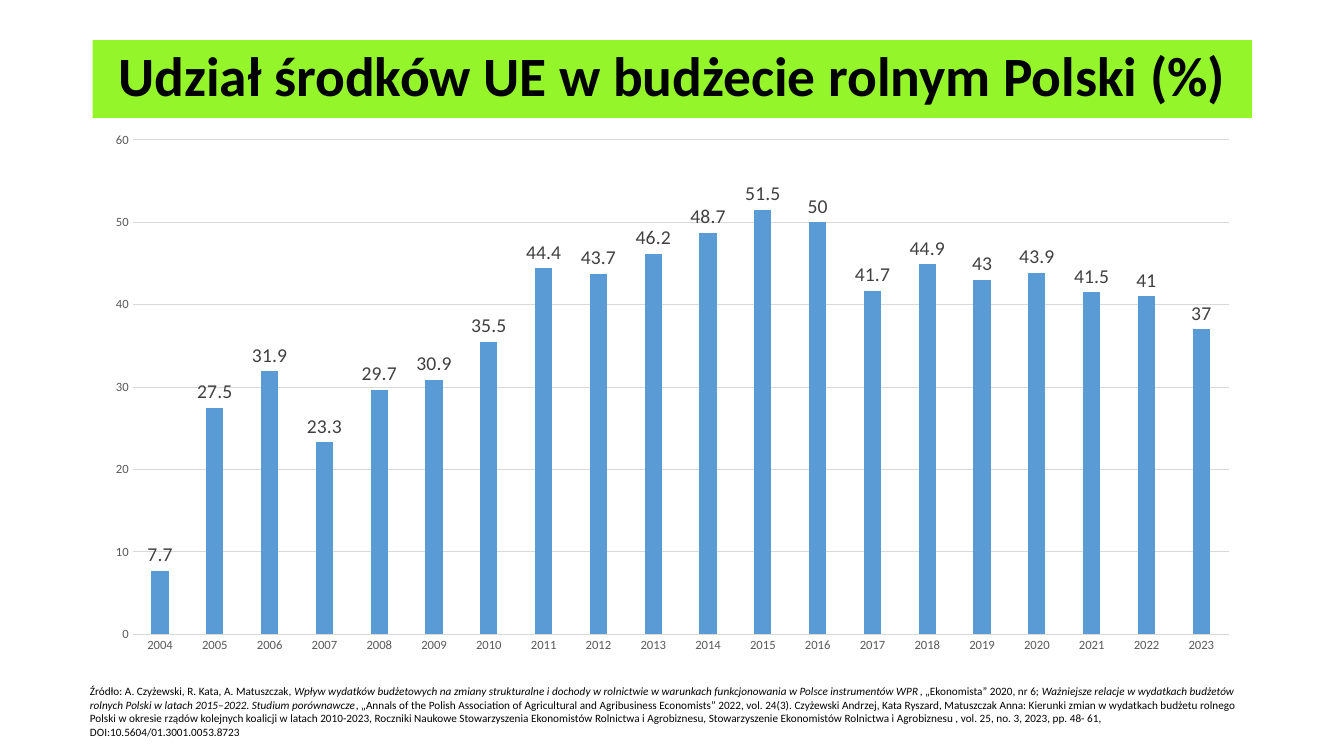
"""Build a slide with a column chart of the EU share in Poland's farm budget."""
import pptx
import pptx.chart.data
import pptx.dml.color
import pptx.enum.chart
import pptx.enum.shapes
import pptx.enum.text
import pptx.util

theme = {
    "font": "Calibri",
    "band": "95F52B", "ink": "000000", "bar": "5B9BD5",
    "grid": "D9D9D9", "axis": "595959", "label": "404040",
    "title_size": 39.6, "base_size": 10, "axis_size": 9,
    "label_size": 14, "note_size": 8,
}
Pt = pptx.util.Pt
enum = pptx.enum.chart


def tint(name):
    return pptx.dml.color.RGBColor.from_string(theme[name])


def style(font, size, color, **extra):
    form = {"name": theme["font"], "size": Pt(theme[size]), **extra}
    for key, value in form.items():
        setattr(font, key, value)
    font.color.rgb = tint(color)


deck = pptx.Presentation()
deck.slide_width = wide = pptx.util.Inches(13.33)
deck.slide_height = high = pptx.util.Inches(7.5)
slide = deck.slides.add_slide(deck.slide_layouts[6])
left, span = int(wide * 0.069), int(wide * 0.8625)

band = slide.shapes.add_shape(
    pptx.enum.shapes.MSO_SHAPE.RECTANGLE,
    left, int(high * 0.053), span, int(high * 0.103))
band.shadow.inherit = False
band.fill.solid()
band.fill.fore_color.rgb = tint("band")
band.line.fill.background()
band.text_frame.vertical_anchor = pptx.enum.text.MSO_ANCHOR.MIDDLE
title = band.text_frame.paragraphs[0]
title.alignment = pptx.enum.text.PP_ALIGN.CENTER
title.line_spacing = 0.9
run = title.add_run()
run.text = "Udział środków UE w budżecie rolnym Polski (%)"
style(run.font, "title_size", "ink", bold=True)

data = pptx.chart.data.CategoryChartData()
data.categories = [str(year) for year in range(2004, 2024)]
data.add_series("Udział (%)", [
    7.7, 27.5, 31.9, 23.3, 29.7, 30.9, 35.5, 44.4, 43.7, 46.2,
    48.7, 51.5, 50, 41.7, 44.9, 43, 43.9, 41.5, 41, 37])
chart = slide.shapes.add_chart(
    enum.XL_CHART_TYPE.COLUMN_CLUSTERED,
    left, int(high * 0.161), span, int(high * 0.717), data).chart
chart.has_legend = False
chart.has_title = False
style(chart.font, "base_size", "ink")

plot = chart.plots[0]
for key, value in {"gap_width": 219, "overlap": -27,
                   "vary_by_categories": False,
                   "has_data_labels": True}.items():
    setattr(plot, key, value)
fill = plot.series[0].format.fill
fill.solid()
fill.fore_color.rgb = tint("bar")
labels = plot.data_labels
for key, value in {"show_value": True, "number_format": "General",
                   "number_format_is_linked": False,
                   "position": enum.XL_LABEL_POSITION.OUTSIDE_END}.items():
    setattr(labels, key, value)
style(labels.font, "label_size", "label")

years, shares = chart.category_axis, chart.value_axis
for axis in (years, shares):
    axis.major_tick_mark = axis.minor_tick_mark = enum.XL_TICK_MARK.NONE
    style(axis.tick_labels.font, "axis_size", "axis")
for key, value in {"minimum_scale": 0, "maximum_scale": 60,
                   "major_unit": 10, "has_major_gridlines": True}.items():
    setattr(shares, key, value)
shares.format.line.fill.background()
for line in (years.format.line, shares.major_gridlines.format.line):
    line.color.rgb = tint("grid")
    line.width = Pt(0.75)

note = slide.shapes.add_textbox(
    int(wide * 0.0595), int(high * 0.899), int(wide * 0.881), int(high * 0.085))
note.text_frame.word_wrap = True
source = note.text_frame.paragraphs[0]
parts = [
    "Źródło: A. Czyżewski, R. Kata, A. Matuszczak, ",
    "Wpływ wydatków budżetowych na zmiany strukturalne i dochody w rolnictwie "
    "w warunkach funkcjonowania w Polsce instrumentów WPR",
    ", „Ekonomista” 2020, nr 6; ",
    "Ważniejsze relacje w wydatkach budżetów rolnych Polski "
    "w latach 2015–2022. Studium porównawcze",
    ", „Annals of the Polish Association of Agricultural and Agribusiness "
    "Economists” 2022, vol. 24(3). Czyżewski Andrzej, Kata Ryszard, "
    "Matuszczak Anna: Kierunki zmian w wydatkach budżetu rolnego Polski "
    "w okresie rządów kolejnych koalicji w latach 2010-2023, Roczniki Naukowe "
    "Stowarzyszenia Ekonomistów Rolnictwa i Agrobiznesu, Stowarzyszenie "
    "Ekonomistów Rolnictwa i Agrobiznesu , vol. 25, no. 3, 2023, pp. 48- 61, "
    "DOI:10.5604/01.3001.0053.8723",
]
for index, part in enumerate(parts):
    run = source.add_run()
    run.text = part
    style(run.font, "note_size", "ink", italic=index % 2 == 1)

deck.save("out.pptx")
